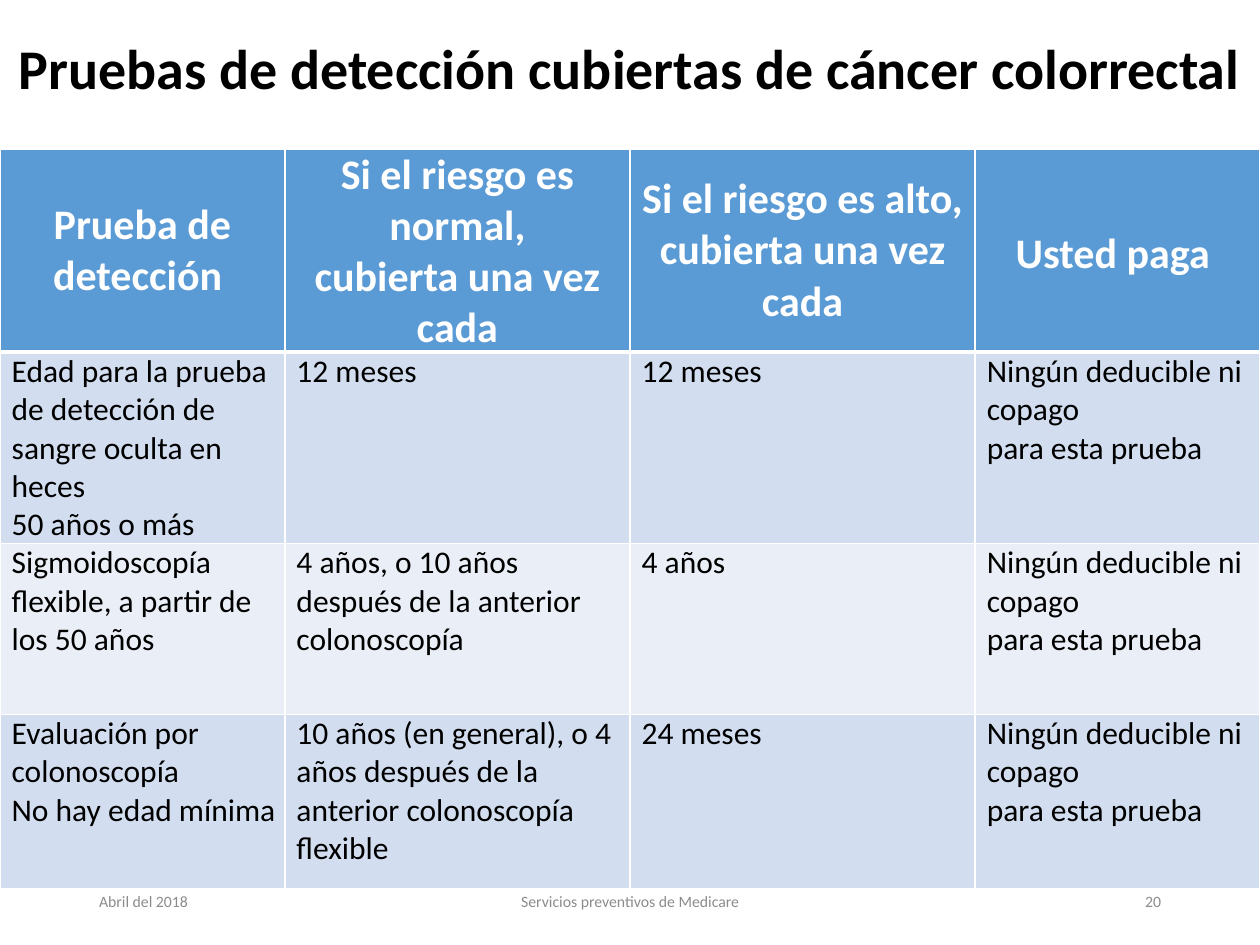
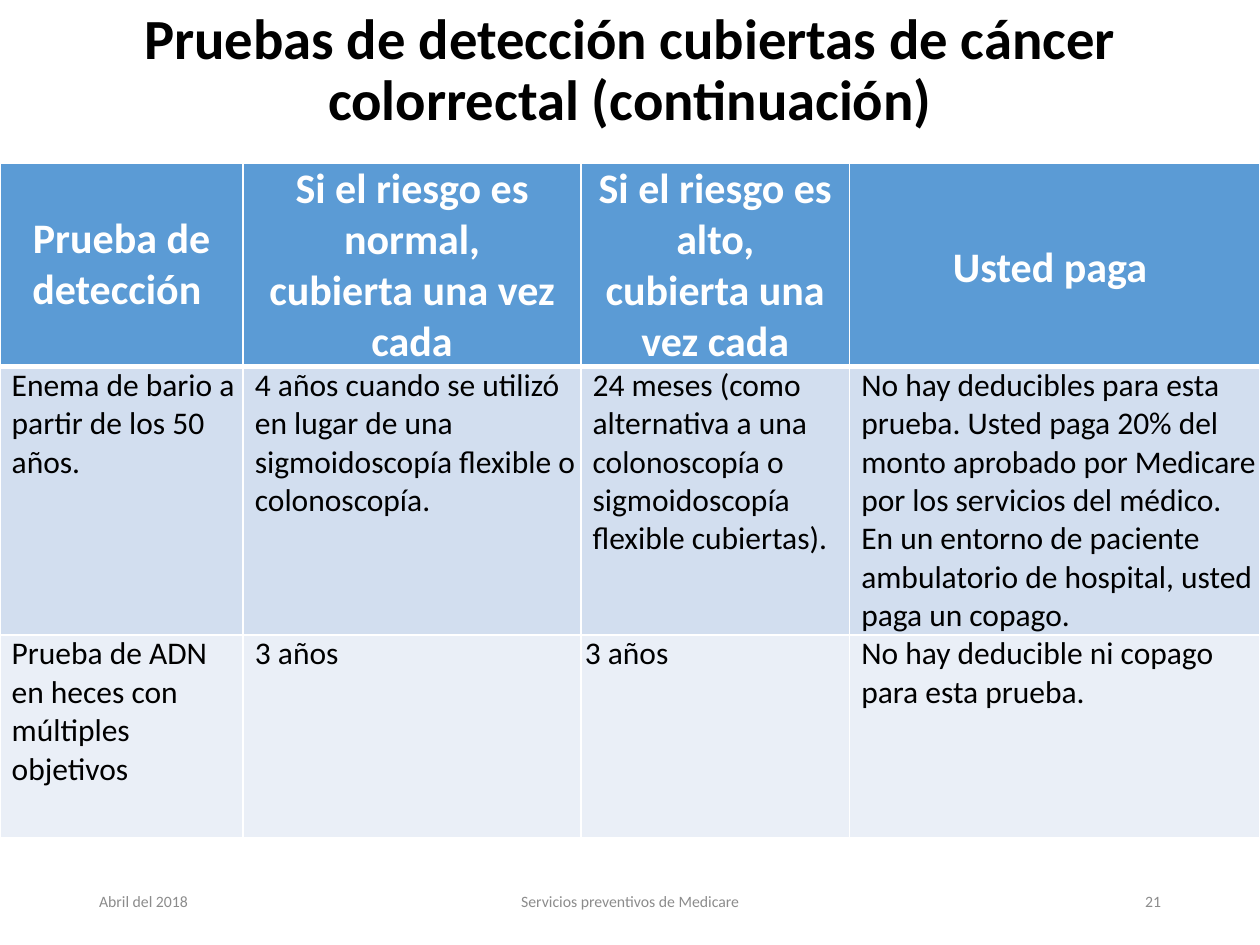
from lxml import etree
from pptx import Presentation
from pptx.dml.color import RGBColor
from pptx.enum import text as t
from pptx.oxml.ns import qn
from pptx.util import Pt

# Shared style
FONT = "Calibri"
BLACK, WHITE, GREY = "000000", "FFFFFF", "8C8C8C"
HEADER_FILL = "5B9BD5"
BAND_FILLS = ("D2DEEF", "EAEFF7")
INDENT = 4.5

# Shared wording
HEADINGS = ("Prueba de detección ", "Si el riesgo es normal,\vcubierta una vez cada",
            "Si el riesgo es alto,\vcubierta una vez cada", "Usted paga ")
TITLE = "Pruebas de detección cubiertas de cáncer colorrectal"
NO_COST = "Ningún deducible ni copago\vpara esta prueba"


def color(hex_value):
    return RGBColor.from_string(hex_value)


class Deck:
    def __init__(self):
        self.prs = Presentation()
        self.prs.slide_width, self.prs.slide_height = Pt(720), Pt(540)
        self.slide = None

    def style(self, paragraph, size, fill, align, bold=False):
        paragraph.alignment = align
        font = paragraph.font
        font.name, font.size, font.bold = FONT, Pt(size), bold
        font.color.rgb = color(fill)

    def add_slide(self, title, left, size, page):
        self.slide = self.prs.slides.add_slide(self.prs.slide_layouts[5])
        heading = self.slide.shapes.title
        heading.left, heading.top = Pt(left), Pt(0)
        heading.width, heading.height = Pt(720 - 2 * left), Pt(82)
        frame = heading.text_frame
        frame.text = title
        frame.auto_size = t.MSO_AUTO_SIZE.NONE
        frame.vertical_anchor = t.MSO_ANCHOR.MIDDLE
        self.style(frame.paragraphs[0], size, BLACK, t.PP_ALIGN.CENTER, True)
        frame.paragraphs[0].line_spacing = 0.9
        self.footer(page)

    def footer(self, page):
        parts = ((49.5, 162, "Abril del 2018", t.PP_ALIGN.LEFT),
                 (238.5, 243, "Servicios preventivos de Medicare", t.PP_ALIGN.CENTER),
                 (508.5, 162, str(page), t.PP_ALIGN.RIGHT))
        for left, width, wording, align in parts:
            box = self.slide.shapes.add_textbox(Pt(left), Pt(500.5), Pt(width), Pt(28.8))
            frame = box.text_frame
            frame.word_wrap = True
            frame.vertical_anchor = t.MSO_ANCHOR.MIDDLE
            frame.text = wording
            self.style(frame.paragraphs[0], 9, GREY, align)

    def borders(self, cell, top, bottom):
        properties = cell._tc.get_or_add_tcPr()
        for side, width in (("L", 1), ("R", 1), ("T", top), ("B", bottom)):
            line = etree.SubElement(properties, qn(f"a:ln{side}"), w=str(Pt(width)))
            fill = etree.SubElement(line, qn("a:solidFill"))
            etree.SubElement(fill, qn("a:srgbClr"), val=WHITE)

    def cell(self, cell, wording, row, indent):
        header = row == 0
        cell.text = wording
        cell.margin_left = cell.margin_right = Pt(2.2)
        cell.margin_top = cell.margin_bottom = 0
        cell.vertical_anchor = t.MSO_ANCHOR.MIDDLE if header else t.MSO_ANCHOR.TOP
        self.borders(cell, 3 if row == 1 else 1, 3 if header else 1)
        cell.fill.solid()
        cell.fill.fore_color.rgb = color(HEADER_FILL if header else BAND_FILLS[(row - 1) % 2])
        for paragraph in cell.text_frame.paragraphs:
            if header:
                self.style(paragraph, 24, WHITE, t.PP_ALIGN.CENTER, True)
            else:
                paragraph._p.get_or_add_pPr().set("marL", str(Pt(indent)))
                self.style(paragraph, 18, BLACK, t.PP_ALIGN.LEFT)

    def table(self, top, widths, heights, tests, flush=()):
        rows = (HEADINGS, *tests)
        table = self.slide.shapes.add_table(
            len(rows), len(widths), 0, Pt(top), Pt(sum(widths)), Pt(sum(heights))).table
        for column, width in zip(table.columns, widths):
            column.width = Pt(width)
        for r, (height, row) in enumerate(zip(heights, rows)):
            table.rows[r].height = Pt(height)
            for c, wording in enumerate(row):
                self.cell(table.cell(r, c), wording, r, 0 if (r, c) in flush else INDENT)
        table.cell(0, len(widths) - 1).text_frame.paragraphs[0].line_spacing = 1.15


def main():
    deck = Deck()

    # Stool test, sigmoidoscopy and colonoscopy
    deck.add_slide(TITLE, 0, 32, 20)
    deck.table(85.25, (162.75, 197.25, 197.25, 162.75), (116, 109.5, 97.5, 99.5), (
        ("Edad para la prueba de detección de sangre oculta en heces\n50 años o más",
         "12 meses", "12 meses", NO_COST),
        ("Sigmoidoscopía flexible, a partir de los 50 años",
         "4 años, o 10 años después de la anterior colonoscopía", "4 años", NO_COST),
        ("Evaluación por colonoscopía\nNo hay edad mínima",
         "10 años (en general), o 4 años después de la anterior colonoscopía flexible",
         "24 meses", NO_COST),
    ))

    # Barium enema and DNA test
    deck.add_slide(f"{TITLE} (continuación)", 17, 32.4, 21)
    deck.table(93.25, (139, 193, 153.5, 234.5), (116, 153.5, 116), (
        ("Enema de bario a partir de los 50 años.",
         "4 años cuando se utilizó en lugar de una sigmoidoscopía flexible o colonoscopía.",
         "24 meses (como alternativa a una colonoscopía o sigmoidoscopía flexible cubiertas).",
         "No hay deducibles para esta prueba. Usted paga 20% del monto aprobado por Medicare "
         "por los servicios del médico. En un entorno de paciente ambulatorio de hospital, "
         "usted paga un copago."),
        ("Prueba de ADN en heces con múltiples objetivos", "3 años", "3 años",
         "No hay deducible ni copago para esta prueba."),
    ), flush={(2, 2)})

    deck.prs.save("out.pptx")


if __name__ == "__main__":
    main()
